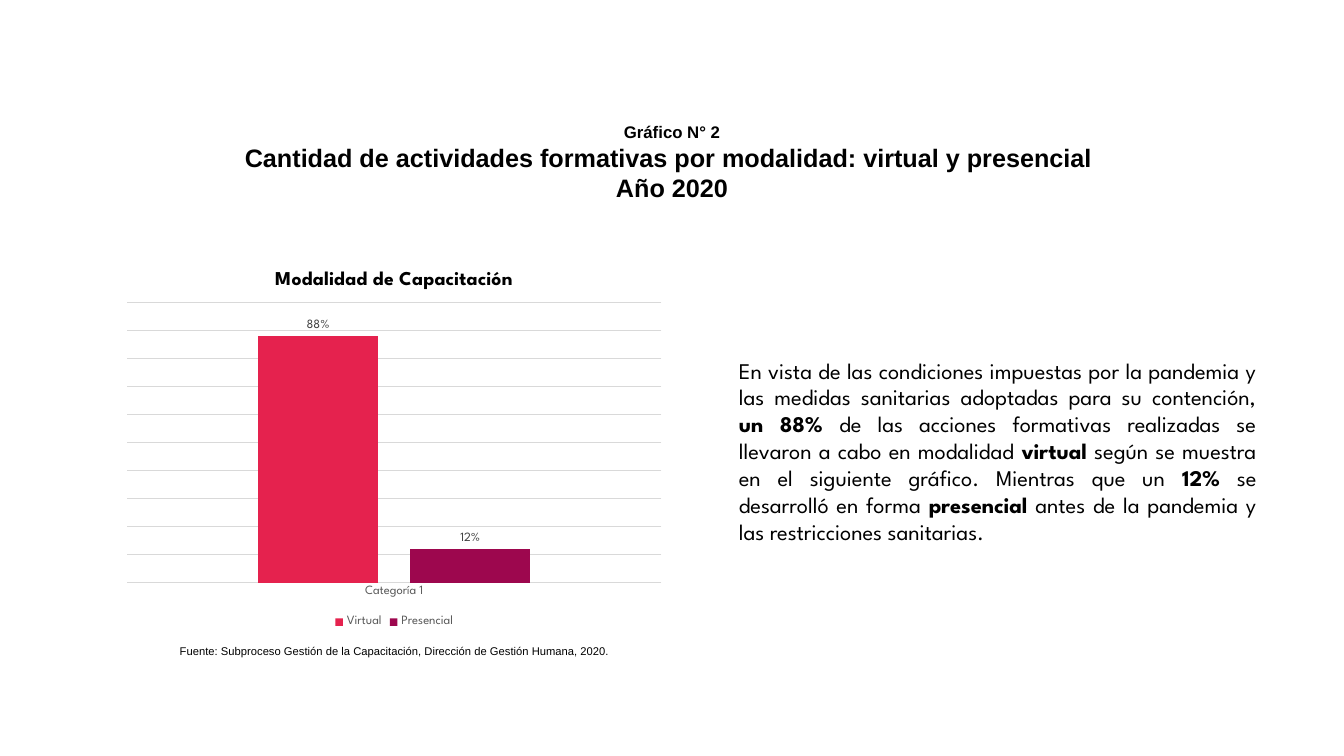
"""Build the slide on training activities by modality, 2020."""
from lxml.etree import SubElement
from pptx import Presentation
from pptx.chart.data import CategoryChartData
from pptx.dml.color import RGBColor
from pptx.enum.chart import XL_CHART_TYPE as ChartType
from pptx.enum.chart import XL_LABEL_POSITION as LabelPosition
from pptx.enum.chart import XL_LEGEND_POSITION as LegendPosition
from pptx.enum.chart import XL_TICK_LABEL_POSITION as TickLabels
from pptx.enum.chart import XL_TICK_MARK as TickMark
from pptx.enum.text import PP_ALIGN as Align
from pptx.oxml.ns import qn
from pptx.util import Pt

PX = 9144
BODY_FONT = "League Spartan"


def style(font, name, size, color="000000", bold=False):
    font.name, font.size, font.bold = name, Pt(size), bold
    font.color.rgb = RGBColor.from_string(color)


def add_text(box, paragraphs, align, name):
    frame = slide.shapes.add_textbox(*(n * PX for n in box)).text_frame
    frame.word_wrap = True
    for index, (text, size, bold) in enumerate(paragraphs):
        paragraph = frame.paragraphs[0] if index == 0 else frame.add_paragraph()
        paragraph.alignment = align
        paragraph.text = text
        style(paragraph.font, name, size, bold=bold)
    return frame


deck = Presentation()
deck.slide_width, deck.slide_height = 1333 * PX, 750 * PX
slide = deck.slides.add_slide(deck.slide_layouts[6])

heading = [
    ("Gráfico N° 2", 12, True),
    ("Cantidad de actividades formativas por modalidad: virtual y presencial ", 18, True),
    ("Año 2020", 18, True),
]
add_text((77, 116, 1179, 91), heading, Align.CENTER, "Arial")

source = "Fuente: Subproceso Gestión de la Capacitación, Dirección de Gestión Humana, 2020."
add_text((58, 634, 667, 24), [(source, 8, False)], Align.CENTER, "Arial")

modalities = [("Virtual", 0.88, "E5224E"), ("Presencial", 0.12, "9D074E")]
shares = CategoryChartData(number_format="0%")
shares.categories = ["Categoría 1"]
for modality, share, _ in modalities:
    shares.add_series(modality, [share])
chart = slide.shapes.add_chart(
    ChartType.COLUMN_CLUSTERED, 115 * PX, 251 * PX, 552 * PX, 376 * PX, shares
).chart
style(chart.font, BODY_FONT, 10)

chart.has_title = True
chart_title = chart.chart_title.text_frame.paragraphs[0]
chart_title.text = "Modalidad de Capacitación"
style(chart_title.font, BODY_FONT, 14, bold=True)
chart.chart_title.include_in_layout = False

chart.has_legend = True
chart.legend.position = LegendPosition.BOTTOM
chart.legend.include_in_layout = False
style(chart.legend.font, BODY_FONT, 9, "595959")

modality_axis = chart.category_axis
modality_axis.major_tick_mark = TickMark.NONE
style(modality_axis.tick_labels.font, BODY_FONT, 9, "595959")
share_axis = chart.value_axis
share_axis.minimum_scale, share_axis.maximum_scale, share_axis.major_unit = 0, 1, 0.1
share_axis.tick_label_position = TickLabels.NONE
share_axis.visible = False
for line in (modality_axis.format.line, share_axis.major_gridlines.format.line):
    line.color.rgb = RGBColor.from_string("D9D9D9")
    line.width = Pt(0.75)

columns = chart.plots[0]
columns.vary_by_categories = False
columns.gap_width, columns.overlap = 219, -27
for series, (_, _, color) in zip(columns.series, modalities):
    series.format.fill.solid()
    series.format.fill.fore_color.rgb = RGBColor.from_string(color)
    labels = series.data_labels
    labels.show_value = True
    labels.position = LabelPosition.OUTSIDE_END
    labels.number_format, labels.number_format_is_linked = "0%", False
    style(labels.font, BODY_FONT, 9, "404040")

plot_area = chart.element.find(".//" + qn("c:plotArea"))
layout = plot_area.find(qn("c:layout"))
if layout is None:
    layout = SubElement(plot_area, qn("c:layout"))
    plot_area.insert(0, layout)
manual = SubElement(layout, qn("c:manualLayout"))
for tag, value in (
    ("layoutTarget", "inner"), ("xMode", "edge"), ("yMode", "edge"),
    ("x", "0.02"), ("y", "0.13"), ("w", "0.96"), ("h", "0.74"),
):
    SubElement(manual, qn("c:" + tag)).set("val", value)

findings = [
    ("En vista de las condiciones impuestas por la pandemia y las medidas sanitarias "
     "adoptadas para su contención, ", False),
    ("un 88% ", True),
    ("de las acciones formativas realizadas se llevaron a cabo en modalidad ", False),
    ("virtual", True),
    (" según se muestra en el siguiente gráfico. Mientras que un ", False),
    ("12%", True),
    (" se desarrolló en forma ", False),
    ("presencial", True),
    (" antes de la pandemia y las restricciones sanitarias.", False),
]
comment = add_text((723, 349, 533, 226), [("", 16, False)], Align.JUSTIFY, BODY_FONT)
for text, bold in findings:
    run = comment.paragraphs[0].add_run()
    run.text = text
    style(run.font, BODY_FONT, 16, bold=bold)

deck.save("out.pptx")
